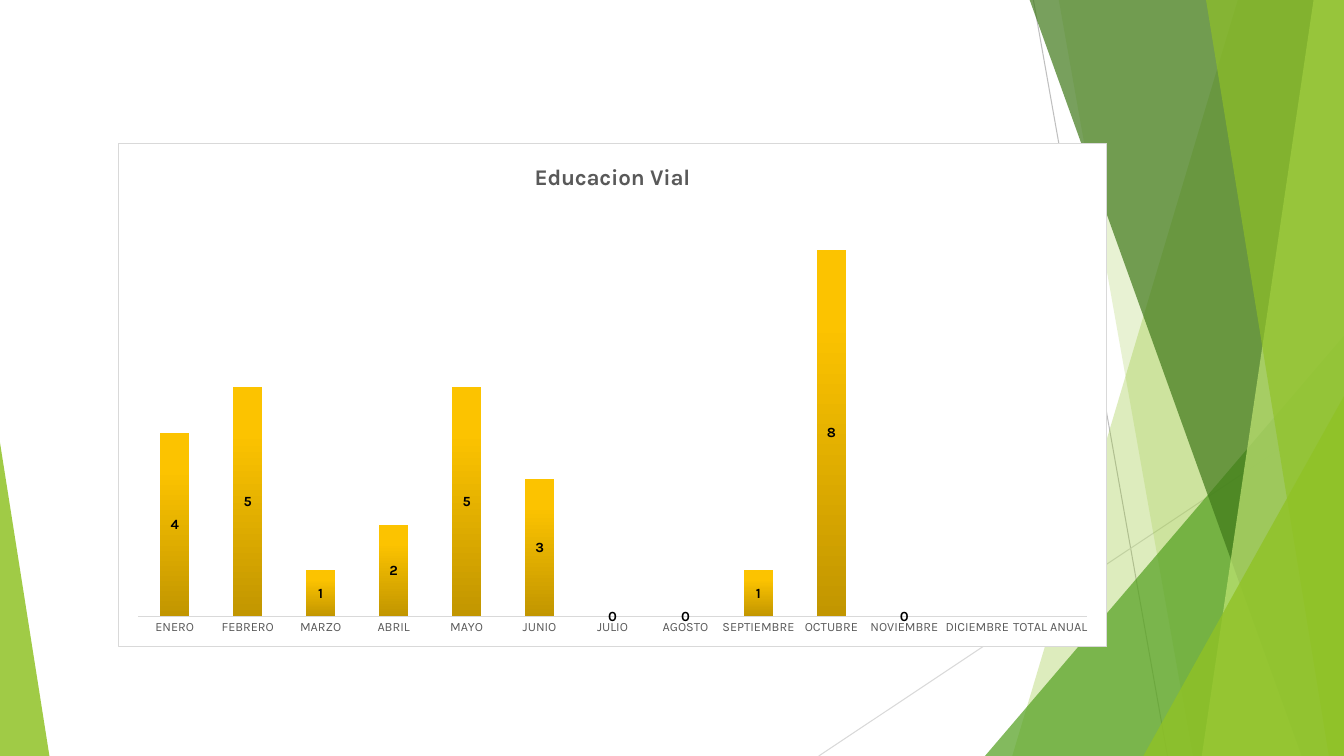
from lxml.etree import SubElement
from pptx import Presentation
from pptx.chart.data import CategoryChartData
from pptx.dml.color import RGBColor
from pptx.enum.chart import (XL_CHART_TYPE as ChartType, XL_LABEL_POSITION as LabelPos,
                             XL_TICK_MARK as TickMark)
from pptx.enum.shapes import MSO_CONNECTOR as Connector, MSO_SHAPE as Shape
from pptx.oxml import parse_xml
from pptx.oxml.ns import nsdecls, qn
from pptx.util import Inches, Pt

COLORS = {
    "white": "FFFFFF", "black": "000000", "gray": "595959",
    "line": "BFBFBF", "pale_line": "D9D9D9",
    "lime": "90C226", "light_lime": "C0E474", "green": "54A021", "forest": "3F7819",
    "gold_dark": "C29600", "gold": "FCC300", "gold_light": "FDC400",
}
FONT = "Karla"
TOP = -0.13  # the facets start just above the slide


class Deck:
    """Places elements by percent of the slide's width and height."""

    def __init__(self, width, height):
        self.prs = Presentation()
        self.prs.slide_width, self.prs.slide_height = Inches(width), Inches(height)
        self.slide = self.prs.slides.add_slide(self.prs.slide_layouts[6])
        self.shapes = self.slide.shapes

    def x(self, share):
        return round(self.prs.slide_width * share / 100)

    def y(self, share):
        return round(self.prs.slide_height * share / 100)

    def color(self, name):
        return RGBColor.from_string(COLORS[name])

    def paint(self, shape, color, alpha):
        shape.shadow.inherit = False
        shape.fill.solid()
        shape.fill.fore_color.rgb = self.color(color)
        shape.line.fill.background()
        tone = shape.fill._xPr.find(".//" + qn("a:srgbClr"))
        SubElement(tone, qn("a:alpha")).set("val", str(alpha * 1000))

    def line(self, x1, y1, x2, y2, color):
        rule = self.shapes.add_connector(
            Connector.STRAIGHT, self.x(x1), self.y(y1), self.x(x2), self.y(y2))
        rule.line.color.rgb = self.color(color)
        rule.line.width = Pt(0.75)
        SubElement(rule._element.spPr, qn("a:effectLst"))

    def facet(self, top_x, bottom_x, color, alpha):
        """Panel from a slanted left edge to the slide's right edge."""
        outline = self.shapes.build_freeform(self.x(top_x), self.y(TOP))
        outline.add_line_segments([
            (self.x(100), self.y(TOP)), (self.x(100), self.y(100)),
            (self.x(bottom_x), self.y(100))], close=True)
        self.paint(outline.convert_to_shape(), color, alpha)

    def wedge(self, left, top, right, apex, color, alpha):
        """Triangle that stands on the slide's bottom edge."""
        triangle = self.shapes.add_shape(
            Shape.ISOSCELES_TRIANGLE, self.x(left), self.y(top),
            self.x(right - left), self.y(100 - top))
        triangle.adjustments[0] = apex
        self.paint(triangle, color, alpha)

    def style(self, font, size, color, bold=False):
        font.name, font.size, font.bold = FONT, Pt(size), bold
        font.color.rgb = self.color(color)

    def column_chart(self, left, top, width, height, title, months, counts):
        data = CategoryChartData()
        data.categories = months
        data.add_series("Series 1", counts)
        chart = self.shapes.add_chart(
            ChartType.COLUMN_STACKED, self.x(left), self.y(top),
            self.x(width), self.y(height), data).chart
        self.style(chart.font, 10, "black")
        chart.has_legend = False
        chart.has_title = True
        heading = chart.chart_title.text_frame.paragraphs[0].add_run()
        heading.text = title
        self.style(heading.font, 16, "gray", bold=True)
        chart.chart_title.include_in_layout = False

        # Axes
        month_axis, count_axis = chart.category_axis, chart.value_axis
        month_axis.major_tick_mark = month_axis.minor_tick_mark = TickMark.NONE
        month_axis.format.line.color.rgb = self.color("pale_line")
        month_axis.format.line.width = Pt(1)
        self.style(month_axis.tick_labels.font, 9, "gray")
        count_axis.minimum_scale, count_axis.maximum_scale = 0, 9
        count_axis.has_major_gridlines = False
        count_axis.visible = False

        # Columns and their labels
        plot = chart.plots[0]
        plot.gap_width, plot.overlap, plot.vary_by_categories = 150, 100, False
        plot.has_data_labels = True
        labels = plot.data_labels
        labels.show_value, labels.position = True, LabelPos.CENTER
        self.style(labels.font, 10, "black", bold=True)
        stops = "".join(
            f'<a:gs pos="{share * 1000}"><a:srgbClr val="{COLORS[tone]}"/></a:gs>'
            for share, tone in ((0, "gold_dark"), (80, "gold"), (100, "gold_light")))
        columns = plot.series[0]
        columns.invert_if_negative = False
        columns.format.fill.background()
        no_fill = columns._element.spPr.find(qn("a:noFill"))
        no_fill.getparent().replace(no_fill, parse_xml(
            f'<a:gradFill {nsdecls("a")}><a:gsLst>{stops}</a:gsLst>'
            '<a:lin ang="16200000" scaled="0"/></a:gradFill>'))
        self.frame(chart)

    def frame(self, chart):
        """White bordered chart area with a fixed plot area."""
        body = chart._chartSpace.find(qn("c:chart"))
        body.addnext(parse_xml(
            f'<c:spPr {nsdecls("c", "a")}>'
            f'<a:solidFill><a:srgbClr val="{COLORS["white"]}"/></a:solidFill>'
            f'<a:ln w="{Pt(0.75)}"><a:solidFill><a:srgbClr val="{COLORS["pale_line"]}"/>'
            '</a:solidFill></a:ln></c:spPr>'))
        area = body.find(qn("c:plotArea"))
        for old in area.findall(qn("c:layout")):
            area.remove(old)
        sizes = "".join(f'<c:{key} val="{share}"/>' for key, share in
                        (("x", 0.02), ("y", 0.12), ("w", 0.96), ("h", 0.82)))
        area.insert(0, parse_xml(
            f'<c:layout {nsdecls("c")}><c:manualLayout><c:layoutTarget val="inner"/>'
            f'<c:xMode val="edge"/><c:yMode val="edge"/>{sizes}'
            '</c:manualLayout></c:layout>'))


def main():
    deck = Deck(13.33, 7.5)

    # Thin lines behind the facets
    deck.line(76.89, 0, 86.87, 100, "line")
    deck.line(100, 53.73, 60.92, 100, "pale_line")

    # Green facets, back to front
    deck.facet(92.12, 75.32, "lime", 30)
    deck.facet(78.77, 88.75, "lime", 20)
    deck.wedge(73.29, 44.4, 100, 1, "green", 72)
    deck.facet(76.59, 96.85, "forest", 70)
    deck.facet(97.75, 89.42, "light_lime", 70)
    deck.facet(89.72, 98.87, "lime", 65)
    deck.wedge(85.07, 52.4, 100, 1, "lime", 80)
    deck.wedge(0, 58.53, 3.68, 0, "lime", 85)

    # Monthly chart
    months = ["ENERO", "FEBRERO", "MARZO", "ABRIL", "MAYO", "JUNIO", "JULIO", "AGOSTO",
              "SEPTIEMBRE", "OCTUBRE", "NOVIEMBRE", "DICIEMBRE", "TOTAL ANUAL"]
    counts = [4, 5, 1, 2, 5, 3, 0, 0, 1, 8, 0, None, None]
    deck.column_chart(8.78, 18.93, 73.59, 66.67, "Educacion Vial", months, counts)

    deck.prs.save("out.pptx")


if __name__ == "__main__":
    main()
